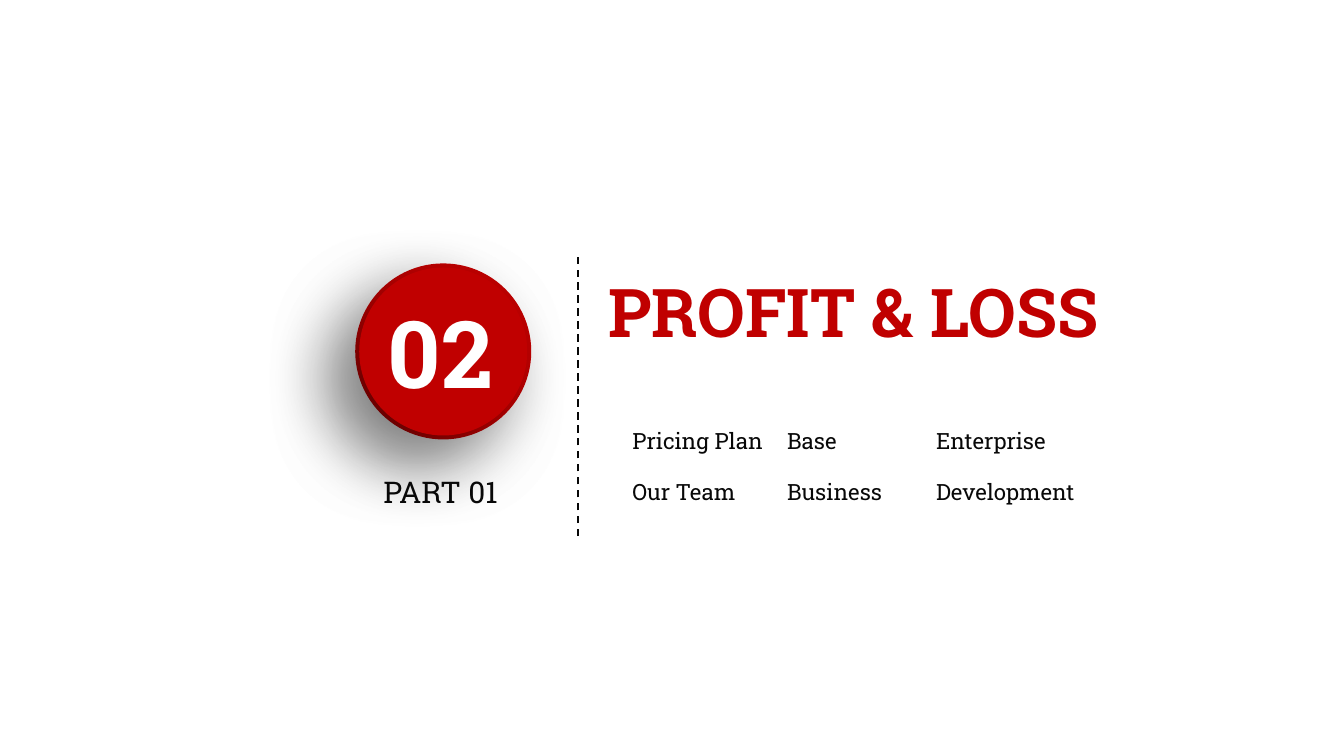
from pptx import Presentation
from pptx.dml.color import RGBColor
from pptx.enum.dml import MSO_LINE_DASH_STYLE as Dash
from pptx.enum.shapes import MSO_CONNECTOR as Connector, MSO_SHAPE as Shape
from pptx.enum.text import MSO_ANCHOR as Anchor, PP_ALIGN as Align
from pptx.oxml import parse_xml
from pptx.oxml.ns import nsdecls
from pptx.util import Inches, Pt

COLUMNS, ROWS = 100, 56.25  # grid of square cells, a tenth of an inch each
RED, INK, WHITE = "C00000", "080808", "FFFFFF"


def color(code):
    return RGBColor.from_string(code)


def cells(*counts):
    return [Inches(count / 10) for count in counts]


class SectionSlide:
    font_name = "Roboto Slab"

    def __init__(self, deck):
        self.slide = deck.slides.add_slide(deck.slide_layouts[6])
        self.shapes = self.slide.shapes

    def text(self, words, area, size, code=INK, bold=False, align=Align.LEFT, inset=(0, 0)):
        """Place one line of text; inset is the side and the top margin in cells."""
        frame = self.shapes.add_textbox(*cells(*area)).text_frame
        side, top = cells(*inset)
        layout = {"word_wrap": True, "vertical_anchor": Anchor.MIDDLE,
                  "margin_left": side, "margin_right": side,
                  "margin_top": top, "margin_bottom": top}
        for name, value in layout.items():
            setattr(frame, name, value)
        para = frame.paragraphs[0]
        para.alignment = align
        span = para.add_run()
        span.text = words
        for name, value in {"name": self.font_name, "size": Pt(size), "bold": bold}.items():
            setattr(span.font, name, value)
        span.font.color.rgb = color(code)

    def dashed_line(self, start, end):
        line = self.shapes.add_connector(Connector.STRAIGHT, *cells(*start, *end))
        line.line.color.rgb = color(INK)
        line.line.width = Pt(1)
        line.line.dash_style = Dash.DASH
        line._element.spPr.append(parse_xml(f"<a:effectLst {nsdecls('a')}/>"))

    def disc(self, group, kind, center, diameter):
        left, top = (middle - diameter / 2 for middle in center)
        disc = group.shapes.add_shape(kind, *cells(left, top, diameter, diameter))
        disc.fill.solid()
        disc.fill.fore_color.rgb = color(RED)
        disc.line.fill.background()
        self.cast_shadow(disc)
        return disc

    def cast_shadow(self, shape):
        """Give the shape a soft shadow towards its lower left."""
        shape._element.spPr.append(parse_xml(
            f"<a:effectLst {nsdecls('a')}>"
            f'<a:outerShdw blurRad="{Pt(35)}" dist="{Pt(20)}" dir="{135 * 60000}"'
            ' algn="ctr" rotWithShape="0"><a:srgbClr val="000000">'
            '<a:alpha val="50000"/></a:srgbClr></a:outerShdw></a:effectLst>'))

    def badge(self, center):
        group = self.shapes.add_group_shape()
        ring = self.disc(group, Shape.DONUT, center, 13.1)
        ring.adjustments[0] = 0.05
        self.disc(group, Shape.OVAL, center, 12.5)


def main():
    deck = Presentation()
    deck.slide_width, deck.slide_height = cells(COLUMNS, ROWS)
    page = SectionSlide(deck)

    page.text("PROFIT & LOSS", (42.7, 19.6, 41.6, 7.1), 36, RED, True,
              Align.CENTER, (1, 0.5))
    page.dashed_line((43, 39.9), (43, 18.8))
    page.badge((32.98, 26.15))
    page.text("PART 01", (28.53, 35.2, 9.9, 2.7), 16)

    topics = [(46.36, 11.4, ("Pricing Plan", "Our Team")),
              (57.86, 10.8, ("Base", "Business")),
              (68.95, 12.5, ("Enterprise", "Development"))]
    for left, width, names in topics:
        for row, name in enumerate(names):
            page.text(name, (left, 31.4 + 3.8 * row, width, 2.7), 12, inset=(0.7, 0.3))

    page.text("02", (28.86, 21.94, 9.9, 8.4), 50, WHITE, True)
    deck.save("out.pptx")


if __name__ == "__main__":
    main()
